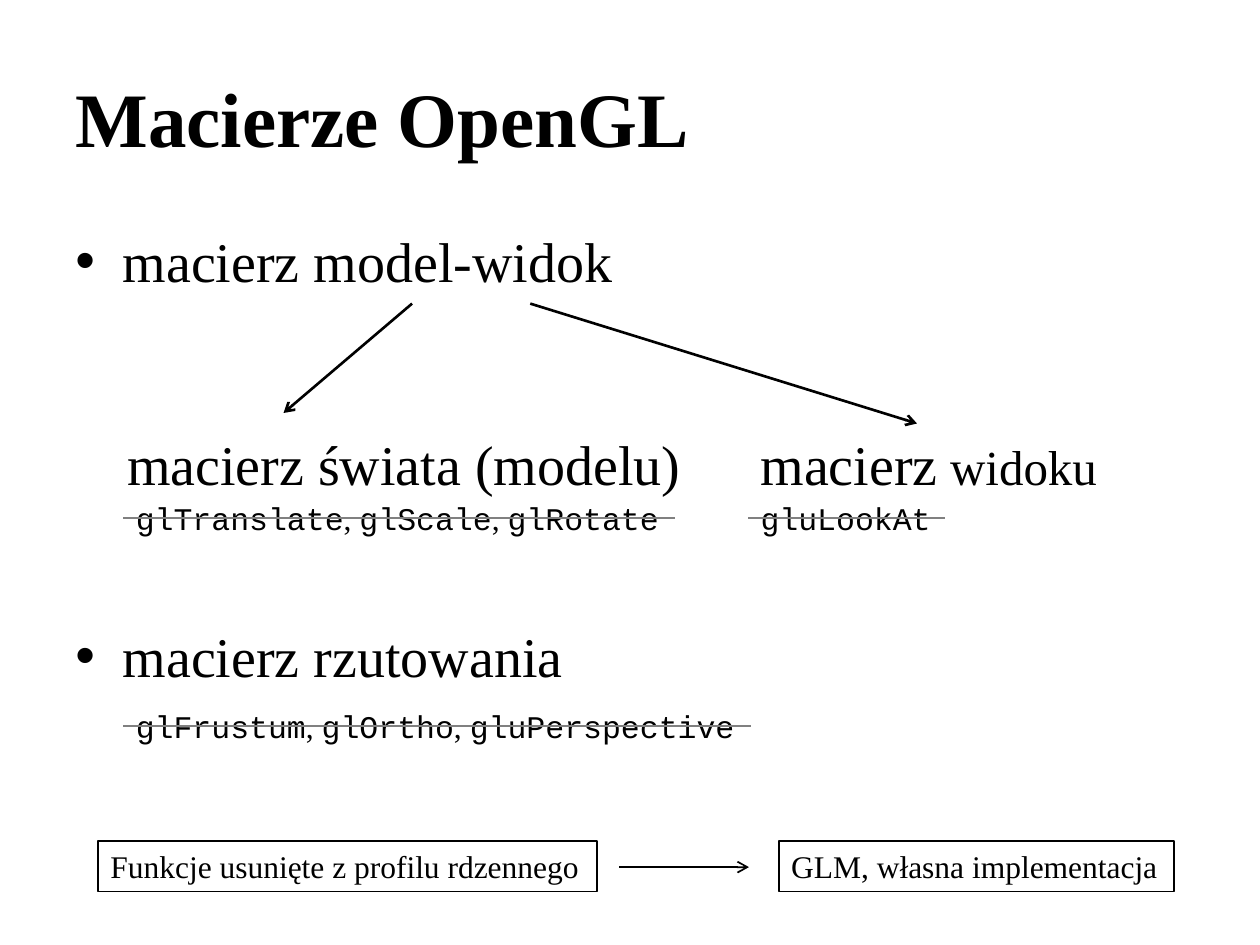
from lxml import etree
from pptx import Presentation
from pptx.dml import color
from pptx.enum import shapes, text
from pptx.oxml import ns
from pptx.util import Pt

SERIF, MONO = "Times New Roman", "Courier New"
BLACK, GREY = "000000", "808080"


def add_text(para, words, size=18, font=SERIF, bold=False):
    span = para.add_run()
    span.text = words
    span.font.size = Pt(size)
    span.font.name = font
    span.font.bold = bold
    span.font.color.rgb = color.RGBColor.from_string(BLACK)


def add_line(x1, y1, x2, y2, hex_color=BLACK, width=1.0, arrow=False):
    line = page.shapes.add_connector(
        shapes.MSO_CONNECTOR.STRAIGHT, Pt(x1), Pt(y1), Pt(x2), Pt(y2))
    line.line.color.rgb = color.RGBColor.from_string(hex_color)
    line.line.width = Pt(width)
    if arrow:
        etree.SubElement(line.line._get_or_add_ln(), ns.qn("a:tailEnd"), type="arrow")
    etree.SubElement(line._element.spPr, ns.qn("a:effectLst"))


deck = Presentation()
deck.slide_width, deck.slide_height = Pt(720), Pt(540)
page = deck.slides.add_slide(deck.slide_layouts[5])

# Title
title = page.shapes.title
title.left, title.top, title.width, title.height = Pt(36), Pt(21.6), Pt(648), Pt(90)
title.text_frame.vertical_anchor = text.MSO_ANCHOR.MIDDLE
heading = title.text_frame.paragraphs[0]
heading.alignment = text.PP_ALIGN.LEFT
add_text(heading, "Macierze OpenGL", size=44, bold=True)

# Bulleted matrices, with room for the diagram between them
body = page.shapes.add_textbox(Pt(36), Pt(126), Pt(648), Pt(280)).text_frame
body.word_wrap = True
bullets = [("macierz model-widok", 4), ("macierz rzutowania", 187)]
for index, (words, gap) in enumerate(bullets):
    para = body.add_paragraph() if index else body.paragraphs[0]
    para.space_before = Pt(gap)
    props = para._p.get_or_add_pPr()
    props.set("marL", str(Pt(27)))
    props.set("indent", str(-Pt(27)))
    etree.SubElement(props, ns.qn("a:buFont"), typeface="Arial")
    etree.SubElement(props, ns.qn("a:buChar"), char="•")
    add_text(para, words, size=32)

# Arrows from the model-view matrix to its two parts
add_line(235.5, 173.5, 162, 236, width=1.5, arrow=True)
add_line(303, 173.5, 524, 242, width=1.5, arrow=True)

# Names of the two parts
parts = [
    (65.5, 334, [("macierz świata (modelu)", 32)]),
    (427.5, 209, [("macierz", 32), (" widoku", 28)]),
]
for left, width, spans in parts:
    box = page.shapes.add_textbox(Pt(left), Pt(242), Pt(width), Pt(46))
    box.text_frame.word_wrap = False
    for words, size in spans:
        add_text(box.text_frame.paragraphs[0], words, size=size)

# Function lists, each crossed out by a grey line
removed = [
    (70.5, 281.5, 315, ["glTranslate", "glScale", "glRotate"]),
    (427.5, 281.5, 112.5, ["gluLookAt"]),
    (70.5, 400.5, 358.5, ["glFrustum", "glOrtho", "gluPerspective"]),
]
for left, top, width, functions in removed:
    box = page.shapes.add_textbox(Pt(left), Pt(top), Pt(width), Pt(29))
    box.text_frame.word_wrap = False
    para = box.text_frame.paragraphs[0]
    for index, function in enumerate(functions):
        if index:
            add_text(para, ", ")
        add_text(para, function, font=MONO)
    add_line(left, top + 14.5, left + width, top + 14.5, hex_color=GREY)

# Framed note: removed functions and their replacement
notes = [
    (56, 285, "Funkcje usunięte z profilu rdzennego"),
    (445, 226, "GLM, własna implementacja"),
]
for left, width, words in notes:
    frame = page.shapes.add_shape(
        shapes.MSO_SHAPE.RECTANGLE, Pt(left), Pt(480.5), Pt(width), Pt(29))
    frame.shadow.inherit = False
    frame.fill.background()
    frame.line.color.rgb = color.RGBColor.from_string(BLACK)
    frame.line.width = Pt(1)
    frame.text_frame.word_wrap = False
    para = frame.text_frame.paragraphs[0]
    para.alignment = text.PP_ALIGN.LEFT
    add_text(para, words)
add_line(354, 495.5, 428, 495.5, arrow=True)

deck.save("out.pptx")
